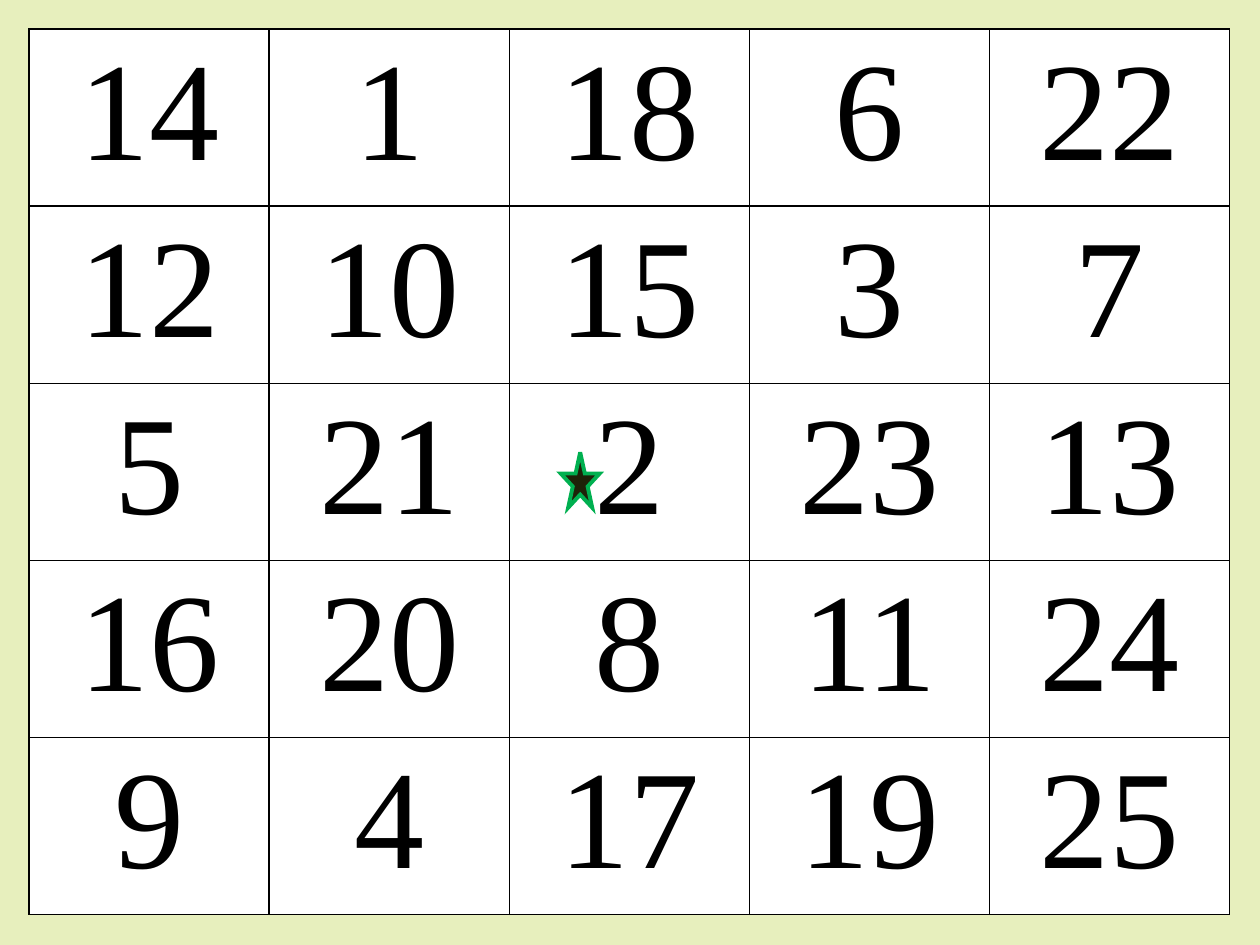
from lxml import etree
from pptx import Presentation
from pptx.dml.color import RGBColor
from pptx.enum.shapes import MSO_SHAPE
from pptx.enum.text import MSO_ANCHOR, PP_ALIGN
from pptx.oxml.ns import qn
from pptx.util import Inches, Pt

STAR = MSO_SHAPE.STAR_5_POINT
CENTER = PP_ALIGN.CENTER
TOP = MSO_ANCHOR.TOP

COLORS = {
    "background": "E7EFBD",
    "cell": "FFFFFF",
    "ink": "000000",
    "star": "1E2208",
    "star_edge": "00B050",
}
NUMBERS = [
    [14, 1, 18, 6, 22],
    [12, 10, 15, 3, 7],
    [5, 21, 2, 23, 13],
    [16, 20, 8, 11, 24],
    [9, 4, 17, 19, 25],
]
NUMBER_FONT = {"name": "Times New Roman", "size": Pt(80), "bold": False}
MARGIN = 0.23
COLUMN_WIDTH, ROW_HEIGHT = 1.906, 1.406
BORDER_SIDES = ("a:lnL", "a:lnR", "a:lnT", "a:lnB")


def color(name):
    return RGBColor.from_string(COLORS[name])


def paint(fill, name):
    fill.solid()
    fill.fore_color.rgb = color(name)


def add_borders(cell, name, width):
    properties = cell._tc.get_or_add_tcPr()
    for side in BORDER_SIDES:
        line = etree.SubElement(properties, qn(side), w=str(Pt(width)))
        solid = etree.SubElement(line, qn("a:solidFill"))
        etree.SubElement(solid, qn("a:srgbClr"), val=COLORS[name])


def fill_cell(cell, number):
    cell.vertical_anchor = TOP
    add_borders(cell, "ink", 1)
    paint(cell.fill, "cell")
    para = cell.text_frame.paragraphs[0]
    para.alignment = CENTER
    span = para.add_run()
    span.text = str(number)
    for attribute, value in NUMBER_FONT.items():
        setattr(span.font, attribute, value)
    span.font.color.rgb = color("ink")


def add_number_grid(page):
    rows, columns = len(NUMBERS), len(NUMBERS[0])
    grid = page.shapes.add_table(
        rows, columns, Inches(MARGIN), Inches(MARGIN),
        Inches(columns * COLUMN_WIDTH), Inches(rows * ROW_HEIGHT)).table
    grid.first_row = grid.horz_banding = False
    for row, numbers in enumerate(NUMBERS):
        for column, number in enumerate(numbers):
            fill_cell(grid.cell(row, column), number)


def add_star(page, left, top, width, height):
    star = page.shapes.add_shape(
        STAR, Inches(left), Inches(top), Inches(width), Inches(height))
    star.shadow.inherit = False
    paint(star.fill, "star")
    paint(star.line.fill, "star_edge")
    star.line.width = Pt(2.25)
    # Sharp outline corners
    etree.SubElement(star.line._get_or_add_ln(), qn("a:miter"), lim="800000")


def main():
    deck = Presentation()
    deck.slide_width, deck.slide_height = Inches(10), Inches(7.5)
    page = deck.slides.add_slide(deck.slide_layouts[6])
    paint(page.background.fill, "background")

    # Number board
    add_number_grid(page)

    # Star marking the middle cell
    add_star(page, 4.45, 3.59, 0.31, 0.44)

    deck.save("out.pptx")


if __name__ == "__main__":
    main()
